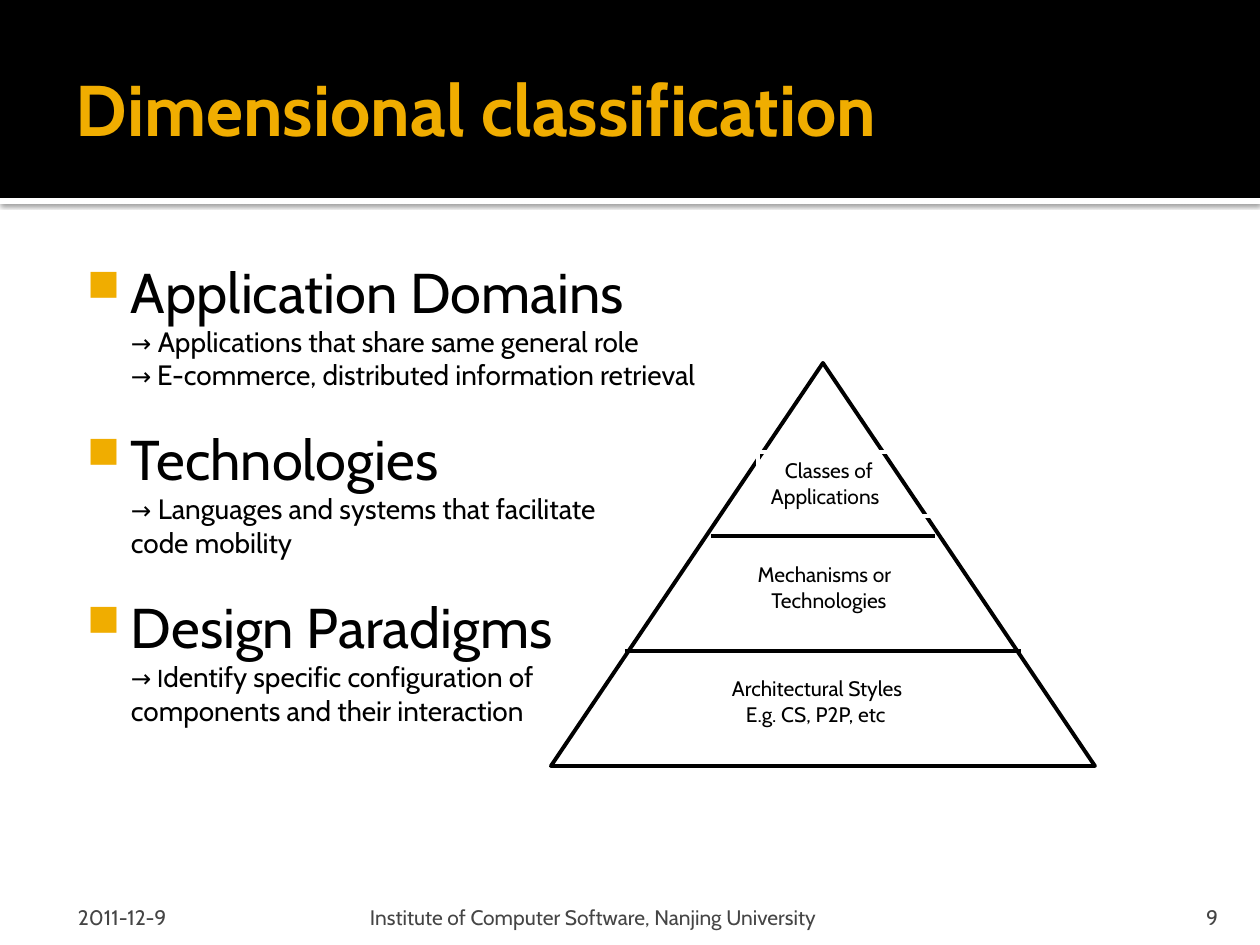
from dataclasses import dataclass

from lxml.etree import SubElement
from pptx import Presentation
from pptx.dml.color import RGBColor
from pptx.enum.shapes import MSO_CONNECTOR, MSO_SHAPE
from pptx.enum.text import MSO_ANCHOR, PP_ALIGN
from pptx.oxml.ns import qn
from pptx.util import Pt

# Content
TITLE = "Dimensional classification"
# Each topic: heading, then lines; each line is a list of (text, size name)
TOPICS = [
    ("Application Domains", [
        [("→", "arrow"), (" Applications that share same general role", "detail")],
        [("→ ", "arrow"), ("E-commerce, distributed information retrieval", "detail")],
    ]),
    ("Technologies", [
        [("→", "arrow"), (" Languages and systems that facilitate ", "detail")],
        [("code mobility", "detail")],
    ]),
    ("Design Paradigms", [
        [("→ I", "arrow"), ("dentify specific configuration of ", "detail")],
        [("components and their interaction", "detail")],
    ]),
]
# Pyramid labels: place, alignment, fill, outline, lines as (text, left indent)
LABELS = [
    ((758, 452, 179, 64), PP_ALIGN.LEFT, None, "paper",
     [("Classes of", 14), ("Applications", 0)]),
    ((699, 556, 246, 77), PP_ALIGN.CENTER, "paper", None,
     [("Mechanisms or", 5), ("Technologies", 14)]),
    ((719, 670, 289, 77), PP_ALIGN.LEFT, "paper", None,
     [("Architectural Styles", 0), ("E.g. CS, P2P, etc", 14)]),
]
PYRAMID = (551, 363, 544, 403)
DIVIDERS = [(711, 935, 536), (625, 1021, 651)]  # left, right, y
# Footer: text, place, alignment, insets
FOOTERS = [
    ("2011-12-9", (63, 892, 294, 38), PP_ALIGN.LEFT, (15, 6, 6, 0)),
    ("9", (1130, 892, 101, 38), PP_ALIGN.RIGHT, (13, 6, 13, 0)),
    ("Institute of Computer Software, Nanjing University",
     (364, 892, 759, 38), PP_ALIGN.LEFT, (6, 6, 6, 0)),
]


@dataclass(frozen=True)
class Theme:
    font: str = "Cabin"
    paper: str = "FFFFFF"
    ink: str = "000000"
    accent: str = "F0AD00"
    muted: str = "454545"
    title: int = 41
    heading: int = 32
    detail: int = 16
    arrow: int = 14
    small: int = 12
    stroke: float = 2.25
    topic_gap: int = 19


THEME = Theme()


def px(length):
    return round(length * 914400 / 126)


def color(name):
    return RGBColor.from_string(getattr(THEME, name))


def style(span, size, tint="ink", bold=False):
    span.font.name = THEME.font
    span.font.size = Pt(getattr(THEME, size))
    span.font.color.rgb = color(tint)
    span.font.bold = bold


def set_frame(shape, insets, anchor=MSO_ANCHOR.TOP):
    frame = shape.text_frame
    frame.word_wrap = True
    frame.vertical_anchor = anchor
    (frame.margin_left, frame.margin_top,
     frame.margin_right, frame.margin_bottom) = map(px, insets)
    return frame


def add_text(place, insets, anchor=MSO_ANCHOR.TOP):
    return set_frame(slide.shapes.add_textbox(*map(px, place)), insets, anchor)


def add_shape(kind, place, fill=None, line=None):
    shape = slide.shapes.add_shape(kind, *map(px, place))
    shape.shadow.inherit = False
    if fill:
        shape.fill.solid()
        shape.fill.fore_color.rgb = color(fill)
    else:
        shape.fill.background()
    if line:
        shape.line.color.rgb = color(line)
        shape.line.width = Pt(THEME.stroke)
    else:
        shape.line.fill.background()
    return shape


def add_drop_shadow(shape):
    effects = shape._element.spPr.find(qn("a:effectLst"))
    shadow = SubElement(effects, qn("a:outerShdw"), blurRad=str(Pt(2.5)),
                        dist=str(Pt(0.8)), dir="5400000", rotWithShape="0")
    tint = SubElement(shadow, qn("a:srgbClr"), val=THEME.ink)
    SubElement(tint, qn("a:alpha"), val="60000")


def add_bullet(para):
    props = para._p.get_or_add_pPr()
    props.set("marL", str(px(60)))
    props.set("indent", str(px(-44)))
    tint = SubElement(props, qn("a:buClr"))
    SubElement(tint, qn("a:srgbClr"), val=THEME.accent)
    SubElement(props, qn("a:buSzPct"), val="80000")
    SubElement(props, qn("a:buChar"), char="■")


deck = Presentation()
deck.slide_width, deck.slide_height = px(1260), px(945)
slide = deck.slides.add_slide(deck.slide_layouts[6])
slide.background.fill.solid()
slide.background.fill.fore_color.rgb = color("paper")

# Header band and title
add_drop_shadow(add_shape(MSO_SHAPE.RECTANGLE, (0, 198, 1260, 6), "paper"))
add_shape(MSO_SHAPE.RECTANGLE, (0, 0, 1260, 198), "ink")
title = add_text((63, 21, 1134, 173), (13, 6, 6, 6), MSO_ANCHOR.MIDDLE)
title.text = TITLE
style(title.paragraphs[0].runs[0], "title", "accent", bold=True)

# Topics
body = add_text((63, 244, 1134, 638), (8, 13, 13, 6))
for index, (heading, lines) in enumerate(TOPICS):
    para = body.add_paragraph() if index else body.paragraphs[0]
    if index:
        para.space_before = Pt(THEME.topic_gap)
    add_bullet(para)
    for number, line in enumerate([[(heading, "heading")], *lines]):
        if number:
            para.add_line_break()
        for text, size in line:
            span = para.add_run()
            span.text = text
            style(span, size)

# Pyramid
add_shape(MSO_SHAPE.ISOSCELES_TRIANGLE, PYRAMID, line="ink")
for left, right, y in DIVIDERS:
    divider = slide.shapes.add_connector(
        MSO_CONNECTOR.STRAIGHT, *map(px, (left, y, right, y)))
    divider.line.color.rgb = color("ink")
    divider.line.width = Pt(THEME.stroke)
    SubElement(divider._element.spPr, qn("a:effectLst"))
for place, alignment, fill, line, rows in LABELS:
    label = set_frame(add_shape(MSO_SHAPE.RECTANGLE, place, fill, line), (13, 6, 13, 6))
    label.text = "\n".join(text for text, _ in rows)
    for para, (_, indent) in zip(label.paragraphs, rows):
        para.alignment = alignment
        para._p.get_or_add_pPr().set("marL", str(px(indent)))
        style(para.runs[0], "small")

# Footer
for text, place, alignment, insets in FOOTERS:
    footer = add_text(place, insets, MSO_ANCHOR.BOTTOM)
    footer.text = text
    footer.paragraphs[0].alignment = alignment
    style(footer.paragraphs[0].runs[0], "small", "muted")

deck.save("out.pptx")
